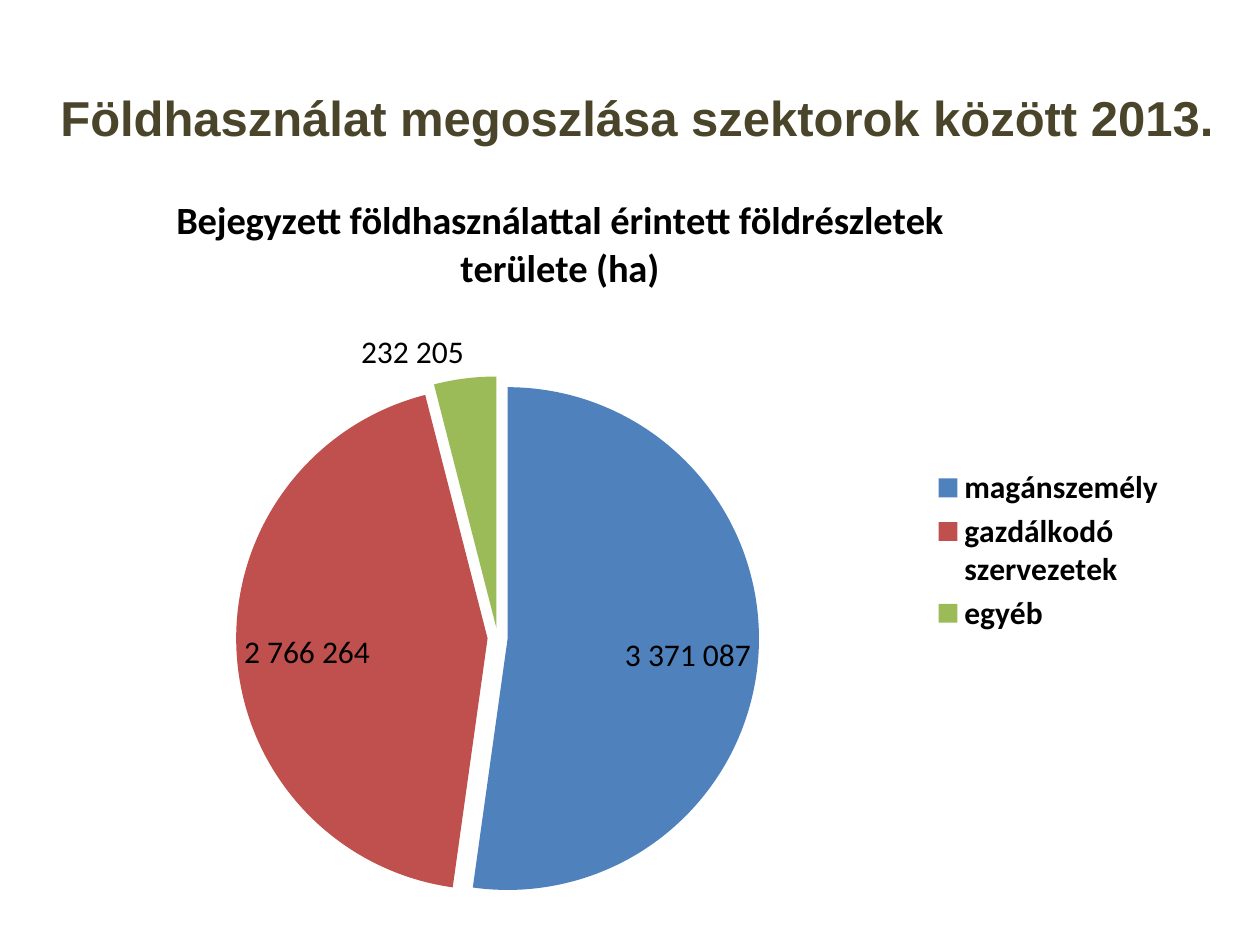
from lxml import etree
from pptx import Presentation
from pptx.chart.data import CategoryChartData
from pptx.dml.color import RGBColor
from pptx.enum.chart import XL_CHART_TYPE, XL_LABEL_POSITION as LabelPosition, XL_LEGEND_POSITION
from pptx.enum.text import MSO_ANCHOR, PP_ALIGN
from pptx.oxml.ns import qn
from pptx.util import Inches, Pt

COLORS = {
    "heading": "4A452A",
    "text": "000000",
    "private": "4F81BD",
    "company": "C0504D",
    "other": "9BBB59",
}
CHART_TITLE = "Bejegyzett földhasználattal érintett földrészletek területe (ha)"
# category, value, label, colour, label position
SECTORS = [
    ("magánszemély", 3350000, "3 371 087", "private", LabelPosition.INSIDE_END),
    ("gazdálkodó\nszervezetek", 2810000, "2 766 264", "company", LabelPosition.INSIDE_END),
    ("egyéb", 256000, "232 205", "other", LabelPosition.OUTSIDE_END),
]


def set_layout(element, index, inner=False, **fractions):
    """Place a chart part by hand; x, y, w and h are fractions of the chart."""
    for old_layout in element.findall(qn("c:layout")):
        element.remove(old_layout)
    layout = etree.Element(qn("c:layout"))
    manual = etree.SubElement(layout, qn("c:manualLayout"))
    if inner:
        etree.SubElement(manual, qn("c:layoutTarget")).set("val", "inner")
    for key in ("x", "y"):
        etree.SubElement(manual, qn(f"c:{key}Mode")).set("val", "edge")
    for key, value in fractions.items():
        etree.SubElement(manual, qn(f"c:{key}")).set("val", str(value))
    element.insert(index, layout)


class SlideBuilder:
    def __init__(self, slide):
        self.slide = slide
        self.heading_font = "Arial"
        self.chart_font = "Calibri"

    def style(self, font, name, size, color, bold=False):
        font.name = name
        font.size = Pt(size)
        font.bold = bold
        font.color.rgb = RGBColor.from_string(COLORS[color])

    def heading(self, text, left, top, width, height):
        box = self.slide.shapes.add_textbox(
            Inches(left), Inches(top), Inches(width), Inches(height))
        frame = box.text_frame
        frame.word_wrap = True
        frame.vertical_anchor = MSO_ANCHOR.MIDDLE
        frame.text = text
        paragraph = frame.paragraphs[0]
        paragraph.alignment = PP_ALIGN.CENTER
        self.style(paragraph.runs[0].font, self.heading_font, 28, "heading", True)

    def pie(self, title, sectors, left, top, width, height):
        data = CategoryChartData(number_format="#,##0")
        data.categories = [sector[0] for sector in sectors]
        data.add_series(title, [sector[1] for sector in sectors])
        chart = self.slide.shapes.add_chart(
            XL_CHART_TYPE.PIE, Inches(left), Inches(top),
            Inches(width), Inches(height), data).chart
        self.style(chart.font, self.chart_font, 10, "text")
        self.pie_title(chart, title)
        self.pie_legend(chart)
        self.pie_slices(chart.plots[0], sectors)
        plot_area = chart._chartSpace.chart.plotArea
        set_layout(plot_area, 0, inner=True, x=0.15, y=0.26, w=0.47, h=0.72)

    def pie_title(self, chart, text):
        frame = chart.chart_title.text_frame
        frame.text = text
        self.style(frame.paragraphs[0].runs[0].font, self.chart_font, 22, "text", True)
        set_layout(chart.chart_title._element, 1, x=0.09, y=0)

    def pie_legend(self, chart):
        chart.has_legend = True
        legend = chart.legend
        legend.position = XL_LEGEND_POSITION.RIGHT
        legend.include_layout = False
        self.style(legend.font, self.chart_font, 18, "text", True)
        set_layout(legend._element, 1, x=0.77, y=0.38, w=0.22, h=0.24)

    def pie_slices(self, plot, sectors):
        plot.vary_by_categories = True
        series = plot.series[0]
        labels = series.data_labels
        labels.show_value = True
        labels.number_format = "#,##0"
        labels.number_format_is_linked = False
        self.style(labels.font, self.chart_font, 18, "text", True)
        for index, (_, _, text, color, position) in enumerate(sectors):
            point = series.points[index]
            point.format.fill.solid()
            point.format.fill.fore_color.rgb = RGBColor.from_string(COLORS[color])
            label = point.data_label
            label.text_frame.text = text
            label.position = position
            run = label.text_frame.paragraphs[0].runs[0]
            self.style(run.font, self.chart_font, 18, "text")
        explosion = etree.Element(qn("c:explosion"))
        explosion.set("val", "4")
        series._element.find(qn("c:dPt")).addprevious(explosion)


def main():
    presentation = Presentation()
    presentation.slide_width = Inches(10)
    presentation.slide_height = Inches(7.5)
    builder = SlideBuilder(presentation.slides.add_slide(presentation.slide_layouts[6]))
    builder.heading("Földhasználat megoszlása szektorok között 2013.", 0.29, 0.3, 9.53, 1.25)
    builder.pie(CHART_TITLE, SECTORS, 0.55, 1.48, 8.83, 5.78)
    presentation.save("out.pptx")


if __name__ == "__main__":
    main()
